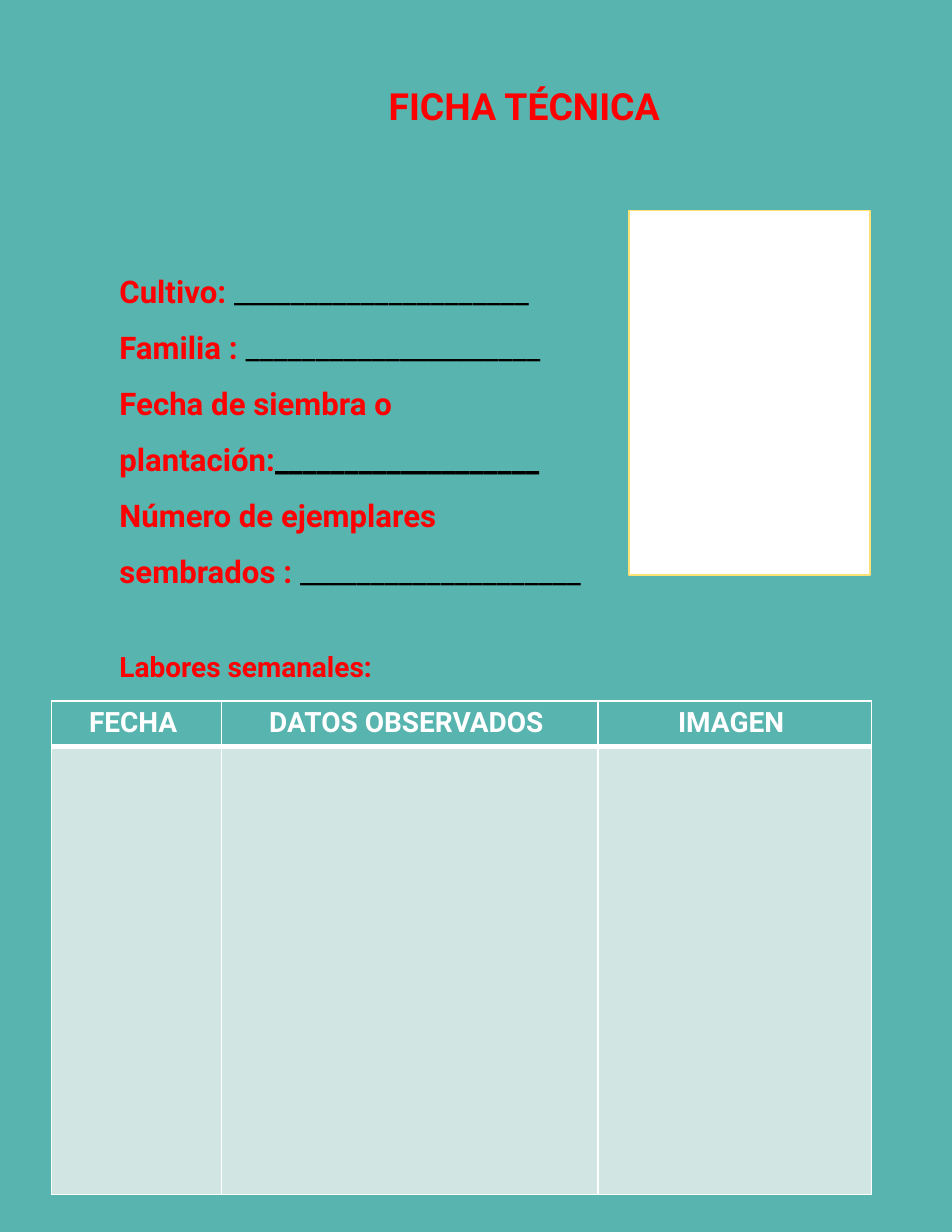
from dataclasses import dataclass

from lxml import etree
from pptx import Presentation
from pptx import util as u
from pptx.dml.color import RGBColor
from pptx.enum import shapes, text
from pptx.oxml import ns


@dataclass(frozen=True)
class Theme:
    font: str = "Roboto"
    teal: str = "58B4AE"
    pale: str = "D1E5E3"
    red: str = "FF0000"
    black: str = "000000"
    white: str = "FFFFFF"
    yellow: str = "FFE277"
    title_size: int = 24
    field_size: int = 20
    label_size: int = 18


class Sheet:
    """Holds the theme and the current slide."""

    def __init__(self, prs, theme):
        self.theme = theme
        self.slide = prs.slides.add_slide(prs.slide_layouts[5])
        self.paint(self.slide.background.fill, theme.teal)

    def paint(self, fill, color):
        fill.solid()
        fill.fore_color.rgb = RGBColor.from_string(color)

    def run(self, paragraph, words, size, color, bold=True):
        run = paragraph.add_run()
        run.text = words
        run.font.name = self.theme.font
        run.font.size = u.Pt(size)
        run.font.bold = bold
        run.font.color.rgb = RGBColor.from_string(color)

    def frame(self, holder):
        frame = holder.text_frame
        frame.word_wrap = True
        frame.auto_size = text.MSO_AUTO_SIZE.NONE
        frame.vertical_anchor = text.MSO_ANCHOR.TOP
        return frame

    def title(self, words, left, top, width, height):
        title = self.slide.shapes.title
        title.left, title.top = u.Cm(left), u.Cm(top)
        title.width, title.height = u.Cm(width), u.Cm(height)
        paragraph = self.frame(title).paragraphs[0]
        paragraph.alignment = text.PP_ALIGN.LEFT
        self.run(paragraph, words, self.theme.title_size, self.theme.red)

    def text_box(self, lines, size, left, top, width, height, spacing=1.0):
        """Each line is a list of (words, color, bold) runs."""
        box = self.slide.shapes.add_textbox(*map(u.Cm, (left, top, width, height)))
        frame = self.frame(box)
        for i, runs in enumerate(lines):
            paragraph = frame.add_paragraph() if i else frame.paragraphs[0]
            paragraph.line_spacing = spacing
            for words, color, bold in runs:
                self.run(paragraph, words, size, color, bold)

    def photo_frame(self, left, top, width, height):
        photo = self.slide.shapes.add_shape(
            shapes.MSO_SHAPE.RECTANGLE, *map(u.Cm, (left, top, width, height)))
        photo.shadow.inherit = False
        self.paint(photo.fill, self.theme.white)
        self.paint(photo.line.fill, self.theme.yellow)
        photo.line.width = u.Pt(1)

    def borders(self, cell, bottom):
        """Outline a cell in white; only the bottom width varies."""
        props = cell._tc.get_or_add_tcPr()
        sides = (("lnL", 1), ("lnR", 1), ("lnT", 1), ("lnB", bottom))
        for i, (side, width) in enumerate(sides):
            line = etree.Element(ns.qn(f"a:{side}"), w=str(u.Pt(width)))
            fill = etree.SubElement(line, ns.qn("a:solidFill"))
            etree.SubElement(fill, ns.qn("a:srgbClr"), val=self.theme.white)
            props.insert(i, line)

    def log_table(self, headings, widths, heights, left, top):
        table = self.slide.shapes.add_table(
            len(heights), len(widths), u.Cm(left), u.Cm(top),
            u.Cm(sum(widths)), u.Cm(sum(heights))).table
        for column, width in zip(table.columns, widths):
            column.width = u.Cm(width)
        for row, height in zip(table.rows, heights):
            row.height = u.Cm(height)
        for i, heading in enumerate(headings):
            header, body = table.cell(0, i), table.cell(1, i)
            self.paint(header.fill, self.theme.teal)
            self.paint(body.fill, self.theme.pale)
            self.borders(header, 3)
            self.borders(body, 1)
            # The header rule is shared with the row below
            body._tc.tcPr.find(ns.qn("a:lnT")).set("w", str(u.Pt(3)))
            paragraph = header.text_frame.paragraphs[0]
            paragraph.alignment = text.PP_ALIGN.CENTER
            self.run(paragraph, heading, self.theme.label_size, self.theme.white)


def main():
    prs = Presentation()
    prs.slide_width, prs.slide_height = u.Cm(21.59), u.Cm(27.94)
    theme = Theme()
    sheet = Sheet(prs, theme)

    # Heading
    sheet.title("FICHA TÉCNICA", 8.56, 1.75, 7.32, 1.27)

    # Crop details: label, blank length, bold blank
    fields = [
        ("Cultivo: ", 21, False),
        ("Familia : ", 21, False),
        ("Fecha de siembra o plantación:", 19, True),
        ("Número de ejemplares sembrados : ", 20, False),
    ]
    details = [[(label, theme.red, True), ("_" * blank, theme.black, bold)]
               for label, blank, bold in fields]
    sheet.text_box(details, theme.field_size, 2.46, 5.64, 11.33, 11.53, spacing=1.5)

    # Space for the crop photo
    sheet.photo_frame(14.27, 4.78, 5.46, 8.26)

    # Weekly work log
    sheet.text_box([[("Labores semanales:", theme.red, True)]],
                   theme.label_size, 2.46, 14.6, 10.44, 1.8)
    sheet.log_table(["FECHA ", "DATOS OBSERVADOS ", "IMAGEN "],
                    widths=[3.86, 8.53, 6.2], heights=[1.03, 10.16],
                    left=1.17, top=15.9)

    prs.save("out.pptx")


if __name__ == "__main__":
    main()
